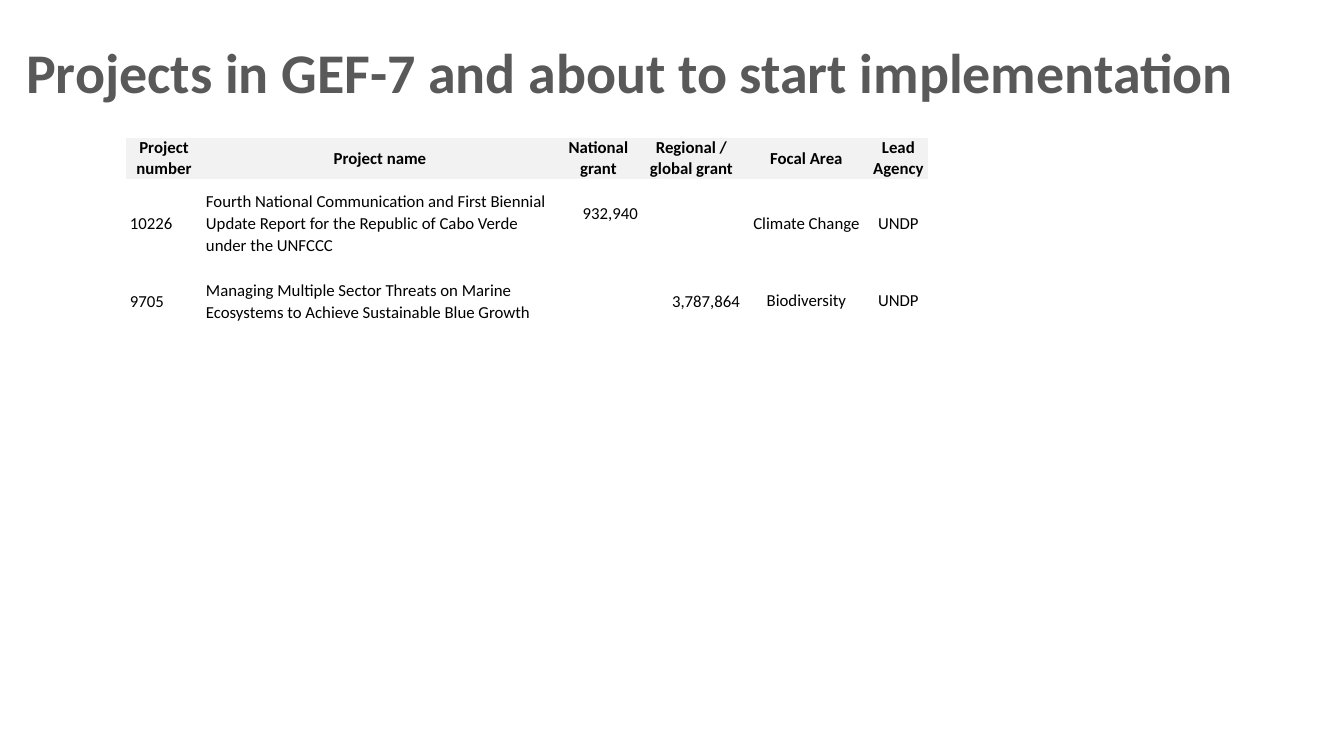
import pptx
import pptx.dml.color
import pptx.enum.text
import pptx.oxml.ns
import pptx.util

PX = 914400 / 100.8
ALIGN = pptx.enum.text.PP_ALIGN
MIDDLE = pptx.enum.text.MSO_ANCHOR.MIDDLE
THEME = {
    "font": "Calibri",
    "title_size": 40,
    "table_size": 12,
    "title": "595959",
    "text": "000000",
    "header_fill": "F2F2F2",
    "plain_table": "{2D5ABB26-0587-4C30-8999-92F81FD0307C}",
}


def px(length):
    return pptx.util.Emu(round(length * PX))


def format_paragraph(paragraph, size, color, bold, alignment, line_spacing):
    paragraph.font.name = THEME["font"]
    paragraph.font.size = pptx.util.Pt(size)
    paragraph.font.bold = bold
    paragraph.font.color.rgb = pptx.dml.color.RGBColor.from_string(color)
    paragraph.alignment = alignment
    paragraph.line_spacing = line_spacing


presentation = pptx.Presentation()
presentation.slide_width = px(1344)
presentation.slide_height = px(756)
slide = presentation.slides.add_slide(presentation.slide_layouts[5])

title = slide.shapes.title
title.left, title.top, title.width, title.height = px(16), px(21), px(1328), px(109)
title.text_frame.text = "Projects in GEF-7 and about to start implementation"
title.text_frame.auto_size = pptx.enum.text.MSO_AUTO_SIZE.NONE
title.text_frame.vertical_anchor = MIDDLE
format_paragraph(title.text_frame.paragraphs[0], THEME["title_size"], THEME["title"],
                 True, ALIGN.LEFT, 0.9)

column_widths = [76, 356, 81, 105, 125, 59]
row_heights = [37, 89, 66, 60, 45, 36, 41]
projects = [
    ["Project number", "Project name", "National grant", "Regional / global grant",
     "Focal Area", "Lead Agency"],
    ["10226",
     "Fourth National Communication and First Biennial Update Report "
     "for the Republic of Cabo Verde under the UNFCCC",
     "932,940", "", "Climate Change", "UNDP"],
    ["9705",
     "Managing Multiple Sector Threats on Marine Ecosystems "
     "to Achieve Sustainable Blue Growth",
     "", "3,787,864", "Biodiversity", "UNDP"],
]
column_alignments = [ALIGN.LEFT, ALIGN.LEFT, ALIGN.RIGHT, ALIGN.RIGHT, ALIGN.CENTER, ALIGN.CENTER]
column_spacings = [1.07, 1.07, 1, 1.07, 1, 1]
column_margins = [4, 4, 1, 4, 1, 1]

table_frame = slide.shapes.add_table(
    len(row_heights), len(column_widths),
    px(126), px(138), px(sum(column_widths)), px(sum(row_heights)))
table = table_frame.table
table.first_row = False
table.horz_banding = False
for style in table_frame.element.iter(pptx.oxml.ns.qn("a:tableStyleId")):
    style.text = THEME["plain_table"]
for column, width in zip(table.columns, column_widths):
    column.width = px(width)

for row_index, height in enumerate(row_heights):
    table.rows[row_index].height = px(height)
    header = row_index == 0
    for column_index in range(len(column_widths)):
        cell = table.cell(row_index, column_index)
        if row_index < len(projects):
            cell.text = projects[row_index][column_index]
        cell.vertical_anchor = MIDDLE
        cell.margin_left = cell.margin_right = px(0 if header else column_margins[column_index])
        cell.margin_top = cell.margin_bottom = 0
        if header:
            cell.fill.solid()
            cell.fill.fore_color.rgb = pptx.dml.color.RGBColor.from_string(THEME["header_fill"])
        else:
            cell.fill.background()
        format_paragraph(
            cell.text_frame.paragraphs[0], THEME["table_size"], THEME["text"], header,
            ALIGN.CENTER if header else column_alignments[column_index],
            1 if header else column_spacings[column_index])

national_grant = table.cell(1, 2)
national_grant.margin_bottom = px(20)

presentation.save("out.pptx")
